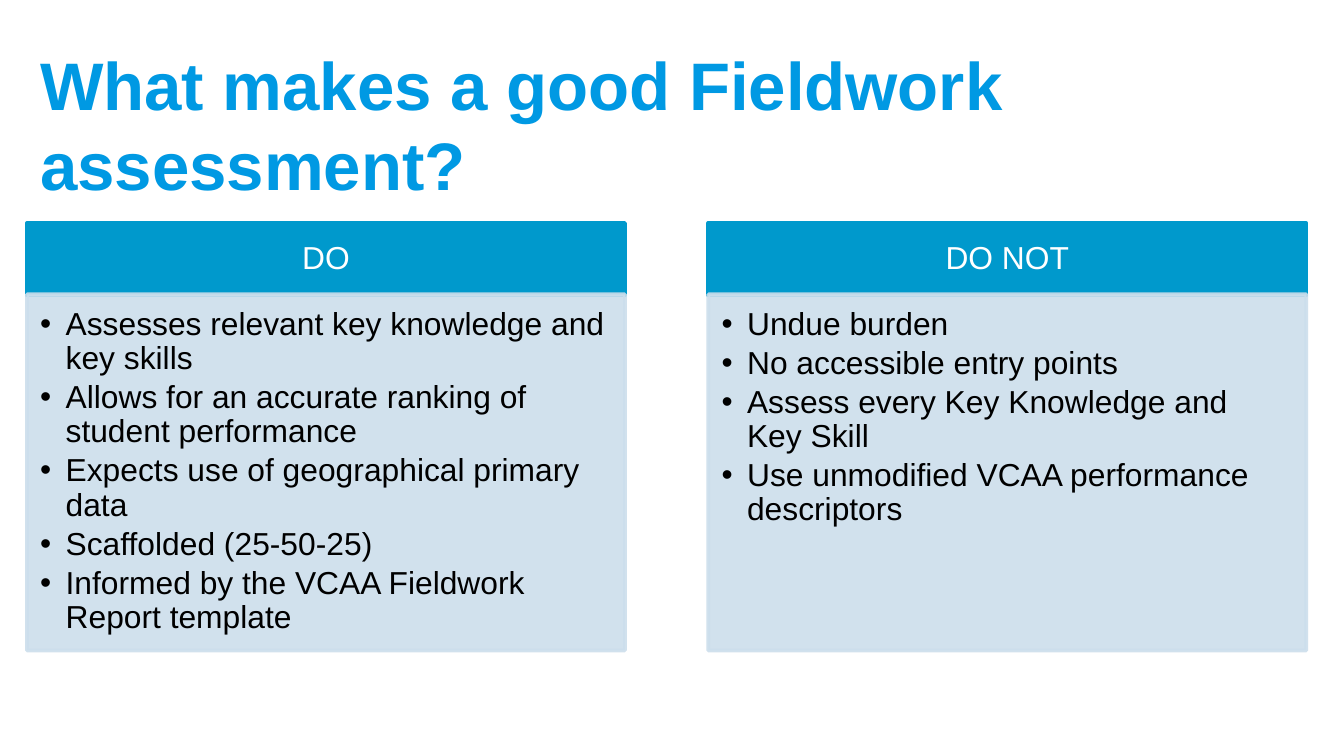
from dataclasses import dataclass

from lxml import etree
from pptx import Presentation
from pptx.dml.color import RGBColor
from pptx.enum.shapes import MSO_SHAPE
from pptx.enum.text import MSO_ANCHOR, PP_ALIGN
from pptx.oxml.ns import qn
from pptx.util import Inches, Pt

RECTANGLE = MSO_SHAPE.RECTANGLE
TOP, MIDDLE = MSO_ANCHOR.TOP, MSO_ANCHOR.MIDDLE
LEFT, CENTER = PP_ALIGN.LEFT, PP_ALIGN.CENTER


@dataclass(frozen=True)
class Theme:
    font: str = "Arial"
    title: RGBColor = RGBColor(0x00, 0x99, 0xE3)
    header: RGBColor = RGBColor(0x00, 0x99, 0xCC)
    panel: RGBColor = RGBColor(0xCC, 0xDE, 0xEC)
    on_header: RGBColor = RGBColor(0xFF, 0xFF, 0xFF)
    body: RGBColor = RGBColor(0x00, 0x00, 0x00)
    title_size: int = 36
    text_size: int = 17


THEME = Theme()
ADVICE = {
    "DO": [
        "Assesses relevant key knowledge and key skills",
        "Allows for an accurate ranking of student performance",
        "Expects use of geographical primary data",
        "Scaffolded (25-50-25)",
        "Informed by the VCAA Fieldwork Report template",
    ],
    "DO NOT": [
        "Undue burden",
        "No accessible entry points",
        "Assess every Key Knowledge and Key Skill",
        "Use unmodified VCAA performance descriptors",
    ],
}

prs = Presentation()
prs.slide_width = Inches(10)
prs.slide_height = prs.slide_width * 9 // 16
slide = prs.slides.add_slide(prs.slide_layouts[6])

MARGIN = 0.2
COLUMN, GUTTER = 4.45, 0.62
HEADER_TOP, PANEL_TOP, PANEL_BOTTOM = 1.66, 2.19, 4.84
HEADER_HEIGHT = 0.54
INDENT = Inches(0.19)


def add_block(left, top, height, color, opacity, anchor, insets):
    """Add a column-wide filled rectangle and return its text frame."""
    block = slide.shapes.add_shape(
        RECTANGLE, Inches(left), Inches(top), Inches(COLUMN), Inches(height))
    block.shadow.inherit = False
    block.line.width = Pt(2)
    for fill in (block.fill, block.line.fill):
        fill.solid()
        fill.fore_color.rgb = color
    if opacity < 100:
        for color_node in block._element.spPr.iter(qn("a:srgbClr")):
            etree.SubElement(color_node, qn("a:alpha"), val=str(opacity * 1000))
    frame = block.text_frame
    frame.word_wrap = True
    frame.vertical_anchor = anchor
    (frame.margin_left, frame.margin_top,
     frame.margin_right, frame.margin_bottom) = map(Inches, insets)
    return frame


def add_text(paragraph, text, size, color, align=LEFT, bold=False):
    paragraph.alignment = align
    run = paragraph.add_run()
    run.text = text
    run.font.name = THEME.font
    run.font.size = Pt(size)
    run.font.bold = bold
    run.font.color.rgb = color


title = slide.shapes.add_textbox(
    Inches(MARGIN), Inches(0.45), Inches(9.53), Inches(0.94)).text_frame
title.word_wrap = True
title.vertical_anchor = MIDDLE
add_text(title.paragraphs[0], "What makes a good Fieldwork assessment?",
         THEME.title_size, THEME.title, bold=True)

for column, (heading, points) in enumerate(ADVICE.items()):
    left = MARGIN + column * (COLUMN + GUTTER)

    header = add_block(left, HEADER_TOP, HEADER_HEIGHT, THEME.header, 100,
                       MIDDLE, (0.13, 0.08, 0.13, 0.08))
    header.paragraphs[0].line_spacing = 0.9
    add_text(header.paragraphs[0], heading, THEME.text_size, THEME.on_header, CENTER)

    panel = add_block(left, PANEL_TOP, PANEL_BOTTOM - PANEL_TOP, THEME.panel, 90,
                      TOP, (0.1, 0.1, 0.13, 0.15))
    for index, point in enumerate(points):
        paragraph = panel.add_paragraph() if index else panel.paragraphs[0]
        paragraph.line_spacing = 0.9
        paragraph.space_after = Pt(0.15 * THEME.text_size)
        properties = paragraph._p.get_or_add_pPr()
        properties.set("marL", str(INDENT))
        properties.set("indent", str(-INDENT))
        etree.SubElement(properties, qn("a:buFont"), typeface=THEME.font)
        etree.SubElement(properties, qn("a:buChar"), char="•")
        add_text(paragraph, point, THEME.text_size, THEME.body)

prs.save("out.pptx")
